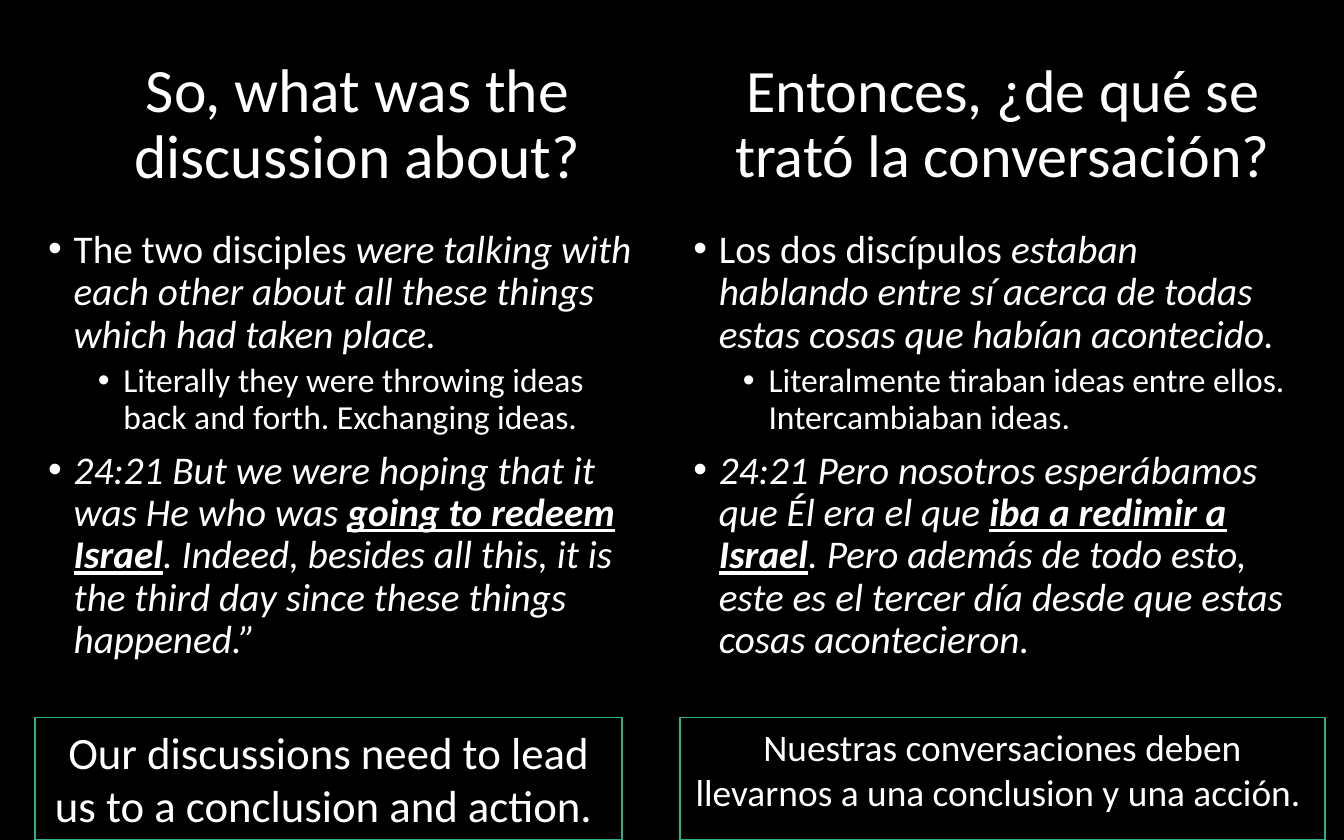
"""Build a bilingual slide about the discussion of the two disciples."""
from lxml.etree import SubElement
from pptx import Presentation
from pptx.dml.color import RGBColor
from pptx.enum.shapes import MSO_SHAPE as Shape
from pptx.enum.text import MSO_ANCHOR as Anchor, PP_ALIGN as Align
from pptx.oxml.ns import qn
from pptx.util import Inches, Pt

BLACK = RGBColor(0x00, 0x00, 0x00)
WHITE = RGBColor(0xFF, 0xFF, 0xFF)
GREEN = RGBColor(0x29, 0xAF, 0x8C)
LEFTS = (0.26, 5.06)
LEVELS = ((21, 0.19, 7.5), (18, 0.56, 3.8))
ITALIC = {"italic": True}
STRONG = {"italic": True, "bold": True, "underline": True}

COLUMNS = (
    {
        "title": ("So, what was the discussion about?", 33),
        "bullets": (
            (0, (("The two disciples", {}),
                 (" were talking with each other about all these things "
                  "which had taken place.", ITALIC))),
            (1, (("Literally they were throwing ideas back and forth. "
                  "Exchanging ideas.", {}),)),
            (0, (("24:21 But we were hoping that it was He who was ", ITALIC),
                 ("going to redeem Israel", STRONG),
                 (". Indeed, besides all this, it is the third day since "
                  "these things happened.”", ITALIC))),
        ),
        "box": ("Our discussions need to lead us to a conclusion and action. ", 24, 4.37),
    },
    {
        "title": ("Entonces, ¿de qué se trató la conversación?", 32.2),
        "bullets": (
            (0, (("Los dos discípulos ", {}),
                 ("estaban hablando entre sí acerca de todas estas cosas "
                  "que habían acontecido.", ITALIC))),
            (1, (("Literalmente tiraban ideas entre ellos. "
                  "Intercambiaban ideas.", {}),)),
            (0, (("24:21 Pero nosotros esperábamos que Él era el que ", ITALIC),
                 ("iba a redimir a Israel", STRONG),
                 (". Pero además de todo esto, este es el tercer día desde "
                  "que estas cosas acontecieron.", ITALIC))),
        ),
        "box": ("Nuestras conversaciones deben llevarnos a una conclusion "
                "y una acción. ", 20, 4.8),
    },
)


def add_text(p, text, size, font="Calibri", color=WHITE, bold=False, italic=False, underline=False):
    r = p.add_run()
    r.text = text
    r.font.name, r.font.size = font, Pt(size)
    r.font.color.rgb = color
    r.font.bold, r.font.italic, r.font.underline = bold, italic, underline


class Deck:
    def __init__(self, prs):
        self.s = prs.slides.add_slide(prs.slide_layouts[6])
        fill = self.s.background.fill
        fill.solid()
        fill.fore_color.rgb = BLACK

    def text_frame(self, left, top, width, height):
        sp = self.s.shapes.add_textbox(Inches(left), Inches(top), Inches(width), Inches(height))
        tf = sp.text_frame
        tf.word_wrap = True
        return tf

    def title(self, left, text, size):
        tf = self.text_frame(left, 0.33, 4.8, 1.21)
        tf.vertical_anchor = Anchor.MIDDLE
        p = tf.paragraphs[0]
        p.alignment, p.line_spacing = Align.CENTER, 0.9
        add_text(p, text, size)

    def bullets(self, left, items):
        tf = self.text_frame(left, 1.66, 4.68, 4.59)
        for i, (level, runs) in enumerate(items):
            p = tf.add_paragraph() if i else tf.paragraphs[0]
            size, margin, before = LEVELS[level]
            p.level, p.line_spacing, p.space_before = level, 0.9, Pt(before)
            pPr = p._p.get_or_add_pPr()
            pPr.set("marL", str(Inches(margin)))
            pPr.set("indent", str(Inches(-0.19)))
            SubElement(pPr, qn("a:buFont"), typeface="Arial")
            SubElement(pPr, qn("a:buChar"), char="•")
            for text, style in runs:
                add_text(p, text, size, **style)

    def box(self, left, text, size, width):
        sp = self.s.shapes.add_shape(
            Shape.RECTANGLE, Inches(left), Inches(5.34), Inches(width), Inches(0.91))
        sp.shadow.inherit = False
        sp.fill.background()
        sp.line.color.rgb, sp.line.width = GREEN, Pt(0.75)
        tf = sp.text_frame
        tf.word_wrap, tf.vertical_anchor = True, Anchor.TOP
        p = tf.paragraphs[0]
        p.alignment = Align.CENTER
        add_text(p, text, size)


def main():
    prs = Presentation()
    prs.slide_width, prs.slide_height = Inches(10), Inches(6.25)
    deck = Deck(prs)
    for left, column in zip(LEFTS, COLUMNS):
        deck.title(left, *column["title"])
        deck.bullets(left, column["bullets"])
        deck.box(left, *column["box"])
    prs.save("out.pptx")


if __name__ == "__main__":
    main()
